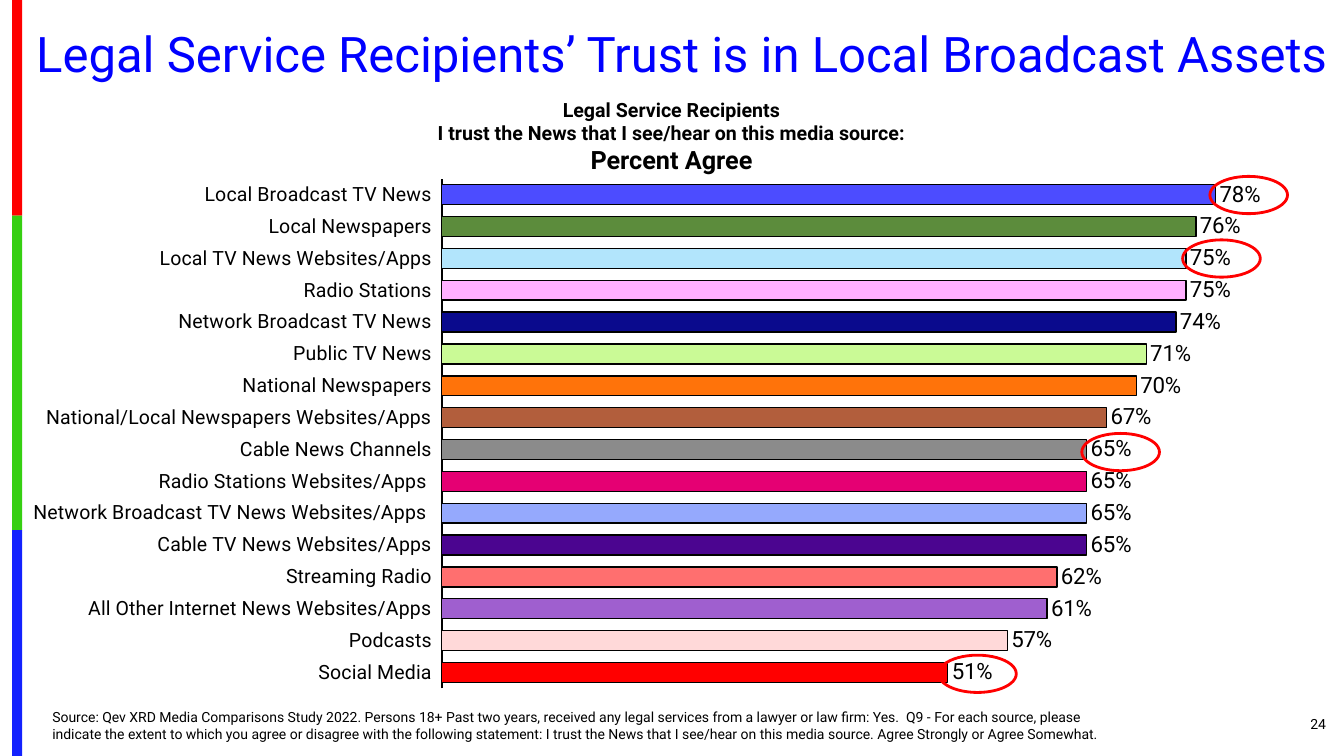
from lxml import etree
from pptx import Presentation
from pptx.chart.data import CategoryChartData
from pptx.dml.color import RGBColor
from pptx.enum.chart import XL_CHART_TYPE, XL_LABEL_POSITION, XL_TICK_LABEL_POSITION, XL_TICK_MARK
from pptx.enum.shapes import MSO_SHAPE
from pptx.enum.text import MSO_ANCHOR, PP_ALIGN
from pptx.oxml.ns import qn
from pptx.util import Inches, Pt

BAR = XL_CHART_TYPE.BAR_CLUSTERED
OUTSIDE_END = XL_LABEL_POSITION.OUTSIDE_END
LABELS_LOW = XL_TICK_LABEL_POSITION.LOW
NO_TICK = XL_TICK_MARK.NONE
RECTANGLE, OVAL = MSO_SHAPE.RECTANGLE, MSO_SHAPE.OVAL
TOP, MIDDLE = MSO_ANCHOR.TOP, MSO_ANCHOR.MIDDLE
LEFT, CENTER, RIGHT = PP_ALIGN.LEFT, PP_ALIGN.CENTER, PP_ALIGN.RIGHT

# Media source, share who agree, bar colour
TRUST = [
    ("Local Broadcast TV News", 0.78, "4C4CFF"),
    ("Local Newspapers", 0.76, "5C8C3C"),
    ("Local TV News Websites/Apps", 0.75, "B2E5FC"),
    ("Radio Stations", 0.75, "FFAFFF"),
    ("Network Broadcast TV News", 0.74, "0A0A8D"),
    ("Public TV News", 0.71, "CAFA96"),
    ("National Newspapers", 0.70, "FF730A"),
    ("National/Local Newspapers Websites/Apps", 0.67, "B25E3C"),
    ("Cable News Channels", 0.65, "8B8B8B"),
    ("Radio Stations Websites/Apps ", 0.65, "E50073"),
    ("Network Broadcast TV News Websites/Apps ", 0.65, "95A9FD"),
    ("Cable TV News Websites/Apps", 0.65, "4B0590"),
    ("Streaming Radio", 0.62, "FF6F6F"),
    ("All Other Internet News Websites/Apps", 0.61, "9F5FCF"),
    ("Podcasts", 0.57, "FFD9D9"),
    ("Social Media", 0.51, "FF0000"),
]
STRIPES = [("FE0000", 2.14), ("36CF12", 3.12), ("1322FE", 2.24)]
CIRCLES = [(12, 1.75), (11.73, 2.38), (10.73, 4.3), (9.31, 6.5)]
SOURCE = (
    "Source: Qev XRD Media Comparisons Study 2022. Persons 18+ Past two years, received any "
    "legal services from a lawyer or law firm: Yes.  Q9 - For each source, please indicate the "
    "extent to which you agree or disagree with the following statement: I trust the News that "
    "I see/hear on this media source. Agree Strongly or Agree Somewhat."
)


def color(value):
    return RGBColor.from_string(value)


class SlideBuilder:
    font_name = "Roboto"
    ink = "000000"

    def __init__(self, page):
        self.page = page

    def style_font(self, font, size, ink=None, bold=False):
        font.name = self.font_name
        font.size = Pt(size)
        font.bold = bold
        font.color.rgb = color(ink or self.ink)

    def text(self, place, lines, align=LEFT, anchor=TOP, ink=None, bold=False, spacing=None):
        """Each line is a (wording, size) pair."""
        frame = self.page.shapes.add_textbox(*map(Inches, place)).text_frame
        frame.word_wrap = True
        frame.vertical_anchor = anchor
        for index, (wording, size) in enumerate(lines):
            para = frame.add_paragraph() if index else frame.paragraphs[0]
            para.text = wording
            para.alignment = align
            para.line_spacing = spacing
            self.style_font(para.font, size, ink, bold)

    def shape(self, kind, place, fill=None, line=None):
        shape = self.page.shapes.add_shape(kind, *map(Inches, place))
        shape.shadow.inherit = False
        if fill:
            shape.fill.solid()
            shape.fill.fore_color.rgb = color(fill)
        else:
            shape.fill.background()
        if line:
            shape.line.color.rgb = color(line)
            shape.line.width = Pt(2)
        else:
            shape.line.fill.background()

    def bar_chart(self, place, rows, plot):
        data = CategoryChartData(number_format="0%")
        data.categories = [name for name, _, _ in rows]
        data.add_series("Series 1", [share for _, share, _ in rows])
        chart = self.page.shapes.add_chart(BAR, *map(Inches, place), data).chart
        chart.has_legend = False
        chart.has_title = False
        self.style_font(chart.font, 10)

        # Axes
        names = chart.category_axis
        names.reverse_order = True
        names.major_tick_mark = NO_TICK
        names.tick_label_position = LABELS_LOW
        names.format.line.color.rgb = color(self.ink)
        names.format.line.width = Pt(1.5)
        self.style_font(names.tick_labels.font, 14)
        shares = chart.value_axis
        shares.minimum_scale, shares.maximum_scale = 0, 0.9
        shares.has_major_gridlines = False
        shares.visible = False

        # Bars and their labels
        bars = chart.plots[0]
        bars.gap_width = 60
        bars.vary_by_categories = False
        series = bars.series[0]
        series.invert_if_negative = False
        for index, (_, _, fill) in enumerate(rows):
            look = series.points[index].format
            look.fill.solid()
            look.fill.fore_color.rgb = color(fill)
            look.line.color.rgb = color(self.ink)
            look.line.width = Pt(1)
        labels = series.data_labels
        labels.show_value = True
        labels.number_format = "0%"
        labels.number_format_is_linked = False
        labels.position = OUTSIDE_END
        self.style_font(labels.font, 16)
        self.fix_plot(bars, plot)

    def fix_plot(self, bars, plot):
        """Pin the inner plot area to fractions of the chart."""
        area = bars._element.getparent()
        for old in area.findall(qn("c:layout")):
            area.remove(old)
        layout = etree.Element(qn("c:layout"))
        manual = etree.SubElement(layout, qn("c:manualLayout"))
        settings = [("layoutTarget", "inner"), ("xMode", "edge"), ("yMode", "edge")]
        settings += zip("xywh", map(str, plot))
        for tag, value in settings:
            etree.SubElement(manual, qn("c:" + tag)).set("val", value)
        area.insert(0, layout)


def main():
    deck = Presentation()
    deck.slide_width, deck.slide_height = Inches(13.33), Inches(7.5)
    builder = SlideBuilder(deck.slides.add_slide(deck.slide_layouts[6]))

    # Stripes down the left edge
    top = 0
    for fill, height in STRIPES:
        builder.shape(RECTANGLE, (0.12, top, 0.1, height), fill=fill)
        top += height

    # Title, page number and source
    title = "Legal Service Recipients’ Trust is in Local Broadcast Assets"
    builder.text((0.21, 0.25, 13.12, 0.63), [(title, 35)], CENTER, ink="0000FF", spacing=0.9)
    builder.text((10.25, 6.98, 3, 0.4), [("24", 10)], RIGHT, MIDDLE)
    builder.text((0.42, 6.98, 10.75, 0.5), [(SOURCE, 10)])

    # Chart with its heading
    heading = [
        ("Legal Service Recipients", 14),
        ("I trust the News that I see/hear on this media source:", 14),
        ("Percent Agree", 18),
    ]
    builder.text((1.87, 0.92, 9.58, 0.88), heading, CENTER, bold=True)
    builder.bar_chart((0.33, 1.67, 12.91, 5.17), TRUST, (0.31, 0.02, 0.69, 0.98))

    # Circles around the key shares
    for left, top in CIRCLES:
        builder.shape(OVAL, (left, top, 0.77, 0.37), line="FF0000")

    deck.save("out.pptx")


if __name__ == "__main__":
    main()
